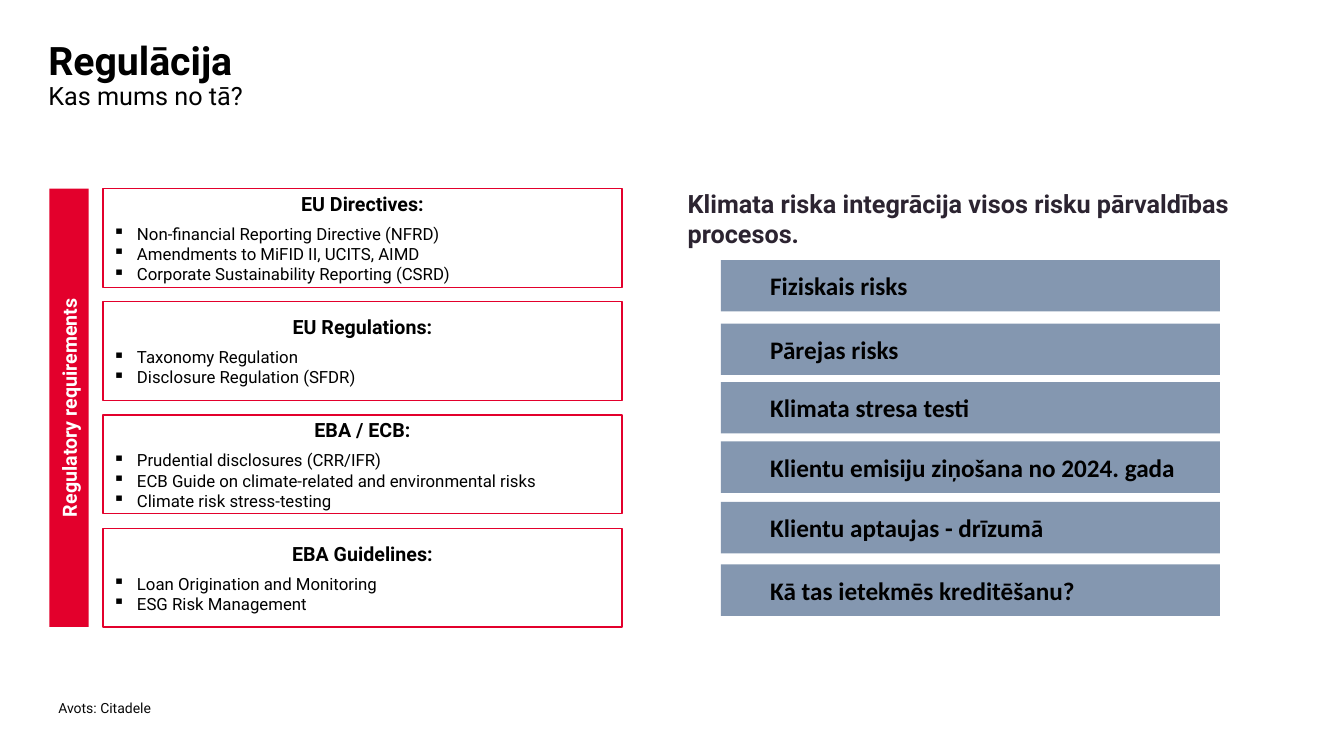
from dataclasses import dataclass

import pptx
import pptx.dml.color
import pptx.enum.shapes
import pptx.enum.text
import pptx.oxml.ns
import pptx.util
from lxml import etree
from pptx.util import Inches

ALIGN = pptx.enum.text.PP_ALIGN
ANCHOR = pptx.enum.text.MSO_ANCHOR


@dataclass(frozen=True)
class Theme:
    text_font: str = "Roboto"
    bar_font: str = "Calibri"
    black: str = "000000"
    white: str = "FFFFFF"
    red: str = "E3002C"
    slate: str = "8497B0"
    plum: str = "2C2431"
    source_ink: str = "080808"
    title_size: int = 28
    large_size: int = 18
    heading_size: int = 14
    item_size: int = 12
    source_size: int = 10


THEME = Theme()

REQUIREMENTS = [
    ("EU Directives:", ["Non-financial Reporting Directive (NFRD)",
                        "Amendments to MiFID II, UCITS, AIMD",
                        "Corporate Sustainability Reporting (CSRD)"]),
    ("EU Regulations:", ["Taxonomy Regulation", "Disclosure Regulation (SFDR)"]),
    ("EBA / ECB:", ["Prudential disclosures (CRR/IFR)",
                    "ECB Guide on climate-related and environmental risks",
                    "Climate risk stress-testing"]),
    ("EBA Guidelines:", ["Loan Origination and Monitoring", "ESG Risk Management"]),
]

# Each topic with its distance below the top of the risk panel
RISK_TOPICS = [
    ("Fiziskais risks", 0.71),
    ("Pārejas risks", 1.34),
    ("Klimata stresa testi", 1.92),
    ("Klientu emisiju ziņošana no 2024. gada", 2.51),
    ("Klientu aptaujas - drīzumā", 3.11),
    ("Kā tas ietekmēs kreditēšanu?", 3.73),
]


def rgb(code):
    return pptx.dml.color.RGBColor.from_string(code)


def style(font, size, color=THEME.black, bold=False, name=THEME.text_font):
    font.name = name
    font.size = pptx.util.Pt(size)
    font.bold = bold
    font.color.rgb = rgb(color)


def indent(paragraph, margin, first_line=0, bullet=None):
    """Set the indents in inches and the bullet; no bullet if None."""
    properties = paragraph._p.get_or_add_pPr()
    properties.set("marL", str(Inches(margin)))
    properties.set("indent", str(Inches(first_line)))
    if bullet:
        mark = etree.SubElement(properties, pptx.oxml.ns.qn("a:buChar"))
        mark.set("char", bullet)
    else:
        etree.SubElement(properties, pptx.oxml.ns.qn("a:buNone"))


def place(placeholder, left, top, width, height):
    """Move a placeholder and return its text frame, cleared of insets."""
    placeholder.left, placeholder.top = Inches(left), Inches(top)
    placeholder.width, placeholder.height = Inches(width), Inches(height)
    frame = placeholder.text_frame
    frame.margin_left = frame.margin_top = 0
    frame.margin_right = frame.margin_bottom = 0
    frame.vertical_anchor = ANCHOR.TOP
    frame.auto_size = pptx.enum.text.MSO_AUTO_SIZE.NONE
    frame.word_wrap = True
    return frame


def add_rectangle(slide, left, top, width, height, fill=None, line=None):
    rectangle = slide.shapes.add_shape(
        pptx.enum.shapes.MSO_SHAPE.RECTANGLE,
        Inches(left), Inches(top), Inches(width), Inches(height))
    rectangle.shadow.inherit = False
    if fill:
        rectangle.fill.solid()
        rectangle.fill.fore_color.rgb = rgb(fill)
    else:
        rectangle.fill.background()
    if line:
        rectangle.line.color.rgb = rgb(line)
        rectangle.line.width = pptx.util.Pt(1)
    else:
        rectangle.line.fill.background()
    rectangle.text_frame.vertical_anchor = ANCHOR.MIDDLE
    rectangle.text_frame.word_wrap = True
    return rectangle


def add_heading(slide, left, top, width, height):
    heading = place(slide.shapes.title, left, top, width, height).paragraphs[0]
    heading.alignment = ALIGN.LEFT
    heading.line_spacing = 0.9
    topic = heading.add_run()
    topic.text = "Regulācija"
    style(topic.font, THEME.title_size, bold=True)
    heading.add_line_break()
    question = heading.add_run()
    question.text = "Kas mums no tā?"
    style(question.font, THEME.large_size)


def add_requirement(slide, heading, items, left, top, width, height):
    frame = add_rectangle(slide, left, top, width, height, line=THEME.red).text_frame
    title = frame.paragraphs[0]
    title.text = heading
    title.alignment = ALIGN.CENTER
    title.space_after = pptx.util.Pt(6)
    style(title.font, THEME.heading_size, bold=True)
    for item in items:
        entry = frame.add_paragraph()
        entry.text = item
        entry.alignment = ALIGN.LEFT
        indent(entry, 0.24, -0.24, "▪")
        style(entry.font, THEME.item_size)


def add_requirements(slide, left, top, width, height):
    strip_width, box_offset, box_height = 0.39, 0.53, 0.98
    strip = add_rectangle(slide, left + (strip_width - height) / 2,
                          top + (height - strip_width) / 2,
                          height, strip_width, fill=THEME.red)
    strip.rotation = 270
    label = strip.text_frame.paragraphs[0]
    label.text = "Regulatory requirements"
    label.alignment = ALIGN.CENTER
    style(label.font, THEME.heading_size, THEME.white, bold=True)

    step = (height - box_height) / (len(REQUIREMENTS) - 1)
    for row, (heading, items) in enumerate(REQUIREMENTS):
        add_requirement(slide, heading, items, left + box_offset,
                        top + row * step, width - box_offset, box_height)


def add_risk_panel(slide, left, top, width, height):
    frame = place(slide.placeholders[1], left, top, width, height)
    message = frame.paragraphs[0]
    message.text = "Klimata riska integrācija visos risku pārvaldības procesos."
    message.alignment = ALIGN.LEFT
    message.line_spacing = 1.0
    message.space_before = pptx.util.Pt(0)
    indent(message, 0)
    style(message.font, THEME.large_size, THEME.plum, bold=True)

    for topic, offset in RISK_TOPICS:
        bar = add_rectangle(slide, left + 0.33, top + offset, 4.95, 0.51,
                            fill=THEME.slate)
        label = bar.text_frame.paragraphs[0]
        label.text = topic
        label.alignment = ALIGN.LEFT
        indent(label, 0.39)
        style(label.font, THEME.large_size, bold=True, name=THEME.bar_font)


def add_source(slide, left, top, width, height):
    box = slide.shapes.add_textbox(Inches(left), Inches(top),
                                   Inches(width), Inches(height))
    box.text_frame.word_wrap = True
    source = box.text_frame.paragraphs[0]
    source.text = "Avots: Citadele"
    style(source.font, THEME.source_size, THEME.source_ink)


def main():
    deck = pptx.Presentation()
    deck.slide_width, deck.slide_height = Inches(13.33), Inches(7.5)
    slide = deck.slides.add_slide(deck.slide_layouts[1])
    add_heading(slide, 0.48, 0.41, 12.02, 0.78)
    add_requirements(slide, 0.49, 1.87, 5.68, 4.35)
    add_risk_panel(slide, 6.82, 1.87, 5.67, 4.8)
    add_source(slide, 0.48, 6.89, 2.21, 0.27)
    deck.save("out.pptx")


if __name__ == "__main__":
    main()
